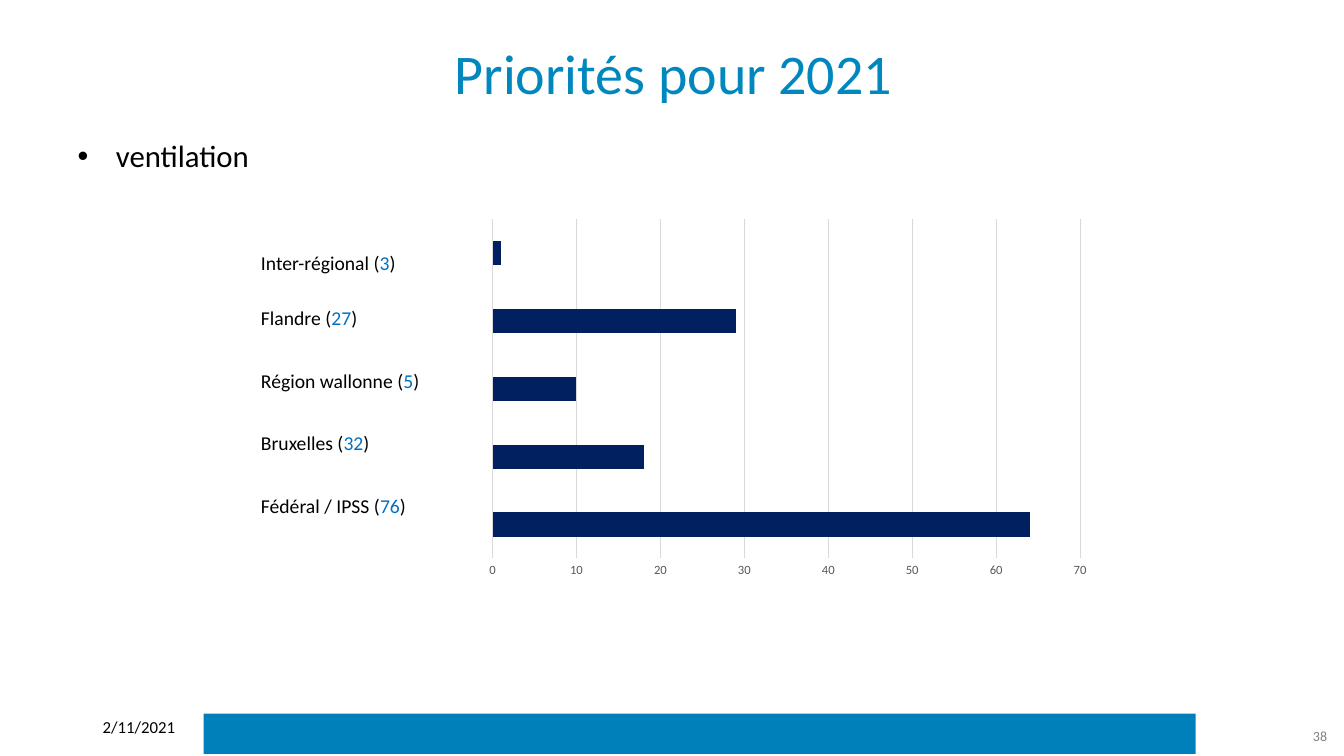
from dataclasses import dataclass

from lxml import etree
from pptx import Presentation
from pptx.chart.data import CategoryChartData
from pptx.dml.color import RGBColor
from pptx.enum.chart import XL_CHART_TYPE, XL_TICK_MARK
from pptx.enum.shapes import MSO_SHAPE
from pptx.enum.text import MSO_ANCHOR, MSO_AUTO_SIZE, PP_ALIGN
from pptx.oxml.ns import qn
from pptx.util import Inches, Pt

BAR_CLUSTERED = XL_CHART_TYPE.BAR_CLUSTERED
NO_TICK = XL_TICK_MARK.NONE
RECTANGLE = MSO_SHAPE.RECTANGLE
TOP, MIDDLE = MSO_ANCHOR.TOP, MSO_ANCHOR.MIDDLE
FIT_SHAPE = MSO_AUTO_SIZE.SHAPE_TO_FIT_TEXT
LEFT, CENTER, RIGHT = PP_ALIGN.LEFT, PP_ALIGN.CENTER, PP_ALIGN.RIGHT


@dataclass(frozen=True)
class Theme:
    font: str = "Calibri"
    text: str = "000000"
    title: str = "0087BE"
    band: str = "0080BB"
    count: str = "0070C0"
    bar: str = "002060"
    grid: str = "D9D9D9"
    axis: str = "595959"
    page: str = "808080"
    title_size: int = 40
    body_size: int = 22
    label_size: int = 14
    date_size: int = 12
    small_size: int = 10
    axis_size: int = 9


THEME = Theme()

# Region, number shown beside it, bar value; from top to bottom
REGIONS = [
    ("Inter-régional", 3, 1),
    ("Flandre", 27, 29),
    ("Région wallonne", 5, 10),
    ("Bruxelles", 32, 18),
    ("Fédéral / IPSS", 76, 64),
]


def style(font, size, color):
    font.name = THEME.font
    font.size = Pt(size)
    font.color.rgb = RGBColor.from_string(color)


def place(shape, box):
    shape.left, shape.top, shape.width, shape.height = map(Inches, box)


def add_text(slide, box, pieces, size, align=LEFT, anchor=TOP):
    """Add one line of text made of (text, color) pieces."""
    frame = slide.shapes.add_textbox(*map(Inches, box)).text_frame
    frame.word_wrap = True
    frame.vertical_anchor = anchor
    line = frame.paragraphs[0]
    line.alignment = align
    for text, color in pieces:
        run = line.add_run()
        run.text = text
        style(run.font, size, color)
    return frame


def add_heading(slide, box):
    heading = slide.shapes.title
    place(heading, box)
    frame = heading.text_frame
    frame.text = "Priorités pour 2021"
    frame.vertical_anchor = MIDDLE
    frame.paragraphs[0].alignment = CENTER
    style(frame.paragraphs[0].runs[0].font, THEME.title_size, THEME.title)


def add_topic(slide, box):
    topic = slide.placeholders[1]
    place(topic, box)
    topic.text_frame.text = "ventilation"
    line = topic.text_frame.paragraphs[0]
    line.space_before = Pt(0)
    properties = line._p.get_or_add_pPr()
    properties.set("marL", str(Inches(0.38)))
    properties.set("indent", str(Inches(-0.38)))
    etree.SubElement(properties, qn("a:buChar"), char="•")
    style(line.runs[0].font, THEME.body_size, THEME.text)


def add_region_labels(slide, box):
    left, top, width, height = box
    first_gap, pitch = 0.55, 0.62
    for row, (region, count, _) in enumerate(REGIONS):
        offset = first_gap + (row - 1) * pitch if row else 0
        pieces = [(f"{region} (", THEME.text), (str(count), THEME.count), (")", THEME.text)]
        frame = add_text(slide, (left, top + offset, width, height), pieces, THEME.label_size)
        frame.auto_size = FIT_SHAPE


def add_region_chart(slide, box):
    # Bar charts draw their first category at the bottom
    data = CategoryChartData()
    data.categories = [str(number + 1) for number in range(len(REGIONS))]
    data.add_series("Series 1", [value for _, _, value in reversed(REGIONS)])
    chart = slide.shapes.add_chart(BAR_CLUSTERED, *map(Inches, box), data).chart
    chart.has_legend = False
    chart.has_title = False
    style(chart.font, THEME.small_size, THEME.text)

    # Bars
    plot = chart.plots[0]
    plot.gap_width = 182
    plot.vary_by_categories = False
    fill = plot.series[0].format.fill
    fill.solid()
    fill.fore_color.rgb = RGBColor.from_string(THEME.bar)

    # Axes
    chart.category_axis.visible = False
    values = chart.value_axis
    values.minimum_scale, values.maximum_scale, values.major_unit = 0, 70, 10
    values.major_tick_mark = values.minor_tick_mark = NO_TICK
    values.format.line.fill.background()
    style(values.tick_labels.font, THEME.axis_size, THEME.axis)
    grid = values.major_gridlines.format.line
    grid.width = Pt(0.75)
    grid.color.rgb = RGBColor.from_string(THEME.grid)


def add_footer(slide, box):
    left, top, width, height = box
    band = slide.shapes.add_shape(
        RECTANGLE, Inches(left + 1.1), Inches(top + 0.02), Inches(9.84), Inches(height))
    band.shadow.inherit = False
    band.fill.solid()
    band.fill.fore_color.rgb = RGBColor.from_string(THEME.band)
    band.line.fill.background()
    add_text(slide, (left, top, 1.26, height), [("2/11/2021", THEME.text)], THEME.date_size)
    page_width = 1.09
    add_text(slide, (left + width - page_width, top + 0.04, page_width, height),
             [("38", THEME.page)], THEME.small_size, RIGHT, MIDDLE)


def main():
    deck = Presentation()
    deck.slide_width, deck.slide_height = Inches(13.33), Inches(7.5)
    slide = deck.slides.add_slide(deck.slide_layouts[1])
    add_heading(slide, (0.68, 0.21, 12, 1.01))
    add_topic(slide, (0.67, 1.31, 12, 5.59))
    add_region_labels(slide, (2.49, 2.44, 2.24, 0.34))
    add_region_chart(slide, (4.73, 2.1, 6.17, 3.7))
    add_footer(slide, (0.92, 7.06, 12.34, 0.4))
    deck.save("out.pptx")


if __name__ == "__main__":
    main()
